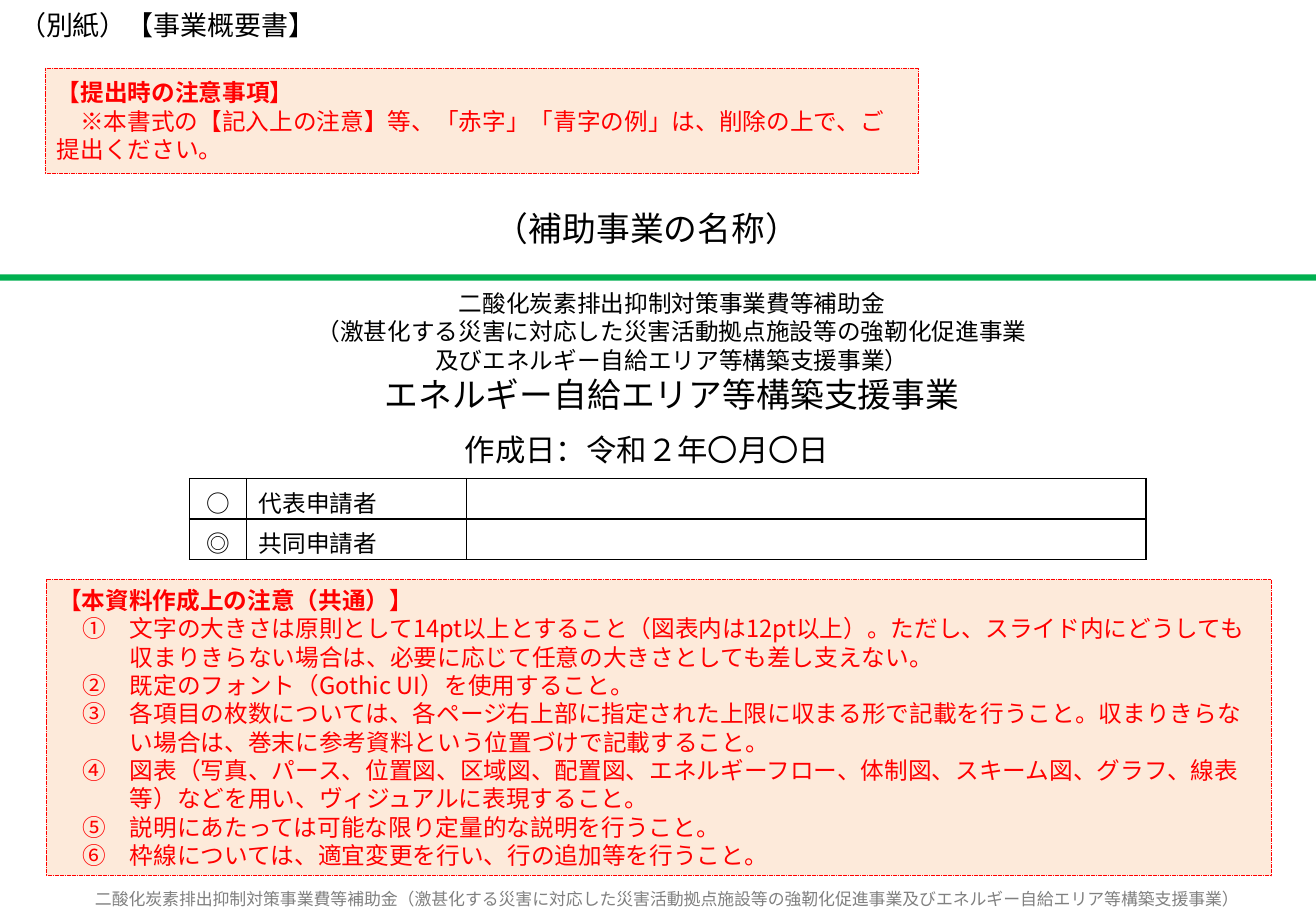
import pptx
import pptx.util
import pptx.dml.color
import pptx.enum.dml
import pptx.enum.shapes
import pptx.enum.text
import pptx.oxml.ns
from lxml import etree

Inches = pptx.util.Inches
Pt = pptx.util.Pt
qn = pptx.oxml.ns.qn
ALIGN = pptx.enum.text.PP_ALIGN
ANCHOR = pptx.enum.text.MSO_ANCHOR
RECT = pptx.enum.shapes.MSO_SHAPE.RECTANGLE
FONT = "Noto Sans CJK JP"
COLORS = {"ink": "000000", "red": "FF0000", "peach": "FDEADA",
          "green": "00B050", "gray": "808080"}

GRANT = ["二酸化炭素排出抑制対策事業費等補助金",
         "（激甚化する災害に対応した災害活動拠点施設等の強靭化促進事業",
         "及びエネルギー自給エリア等構築支援事業）"]
SCHEME = "エネルギー自給エリア等構築支援事業"
ROLES = [("○", "代表申請者", ""), ("◎", "共同申請者", "")]
SUBMIT = ["【提出時の注意事項】",
          "※本書式の【記入上の注意】等、「赤字」「青字の例」は、削除の上で、ご提出ください。"]
RULES = [
    "【本資料作成上の注意（共通）】",
    "文字の大きさは原則として14pt以上とすること（図表内は12pt以上）。ただし、スライド内にどうしても収まりきらない場合は、必要に応じて任意の大きさとしても差し支えない。",
    "既定のフォント（Gothic UI）を使用すること。",
    "各項目の枚数については、各ページ右上部に指定された上限に収まる形で記載を行うこと。収まりきらない場合は、巻末に参考資料という位置づけで記載すること。",
    "図表（写真、パース、位置図、区域図、配置図、エネルギーフロー、体制図、スキーム図、グラフ、線表等）などを用い、ヴィジュアルに表現すること。",
    "説明にあたっては可能な限り定量的な説明を行うこと。",
    "枠線については、適宜変更を行い、行の追加等を行うこと。",
]


def tint(name):
    """Return the named colour."""
    return pptx.dml.color.RGBColor.from_string(COLORS[name])


def style(para, size, color="ink", bold=False, align=ALIGN.LEFT):
    """Format a paragraph and its runs."""
    para.alignment = align
    for run in para.runs:
        font = run.font
        font.size, font.bold, font.name = Pt(size), bold, FONT
        font.color.rgb = tint(color)
        etree.SubElement(run._r.rPr, qn("a:ea"), typeface=FONT)


def add_text(slide, box, lines, sizes, color="ink", align=ALIGN.CENTER, anchor=ANCHOR.TOP):
    """Place plain lines of text in a box."""
    frame = slide.shapes.add_textbox(*map(Inches, box)).text_frame
    frame.word_wrap = True
    frame.vertical_anchor = anchor
    frame.text = "\n".join(lines)
    for para, size in zip(frame.paragraphs, sizes):
        style(para, size, color, align=align)


def add_bar(slide, box):
    """Draw the green divider."""
    bar = slide.shapes.add_shape(RECT, *map(Inches, box))
    bar.shadow.inherit = False
    bar.fill.solid()
    bar.fill.fore_color.rgb = tint("green")
    bar.line.fill.background()


def add_note(slide, box, lines, margin, indent, bullet=None):
    """Draw a dashed red note with a bold heading."""
    note = slide.shapes.add_shape(RECT, *map(Inches, box))
    note.shadow.inherit = False
    note.fill.solid()
    note.fill.fore_color.rgb = tint("peach")
    note.line.color.rgb = tint("red")
    note.line.width = Pt(0.25)
    note.line.dash_style = pptx.enum.dml.MSO_LINE.SQUARE_DOT
    frame = note.text_frame
    frame.word_wrap = True
    frame.vertical_anchor = ANCHOR.MIDDLE
    frame.text = "\n".join(lines)
    head, *body = frame.paragraphs
    style(head, 14, "red", bold=True)
    for para in body:
        style(para, 14, "red")
        props = para._p.get_or_add_pPr()
        props.set("marL", str(Inches(margin)))
        props.set("indent", str(Inches(indent)))
        if bullet:
            etree.SubElement(props, qn("a:buFont"), typeface="+mj-ea")
            etree.SubElement(props, qn("a:buAutoNum"), type=bullet)


def add_edges(cell):
    """Give a cell thin black borders and no fill."""
    props = cell._tc.get_or_add_tcPr()
    for side in ("lnL", "lnR", "lnT", "lnB"):
        edge = etree.SubElement(props, qn("a:" + side), w=str(Pt(1)))
        fill = etree.SubElement(edge, qn("a:solidFill"))
        etree.SubElement(fill, qn("a:srgbClr"), val=COLORS["ink"])
    cell.fill.background()


def add_roles(slide, box, widths):
    """Build the table of applicants."""
    table = slide.shapes.add_table(len(ROLES), len(widths), *map(Inches, box)).table
    table.first_row = table.horz_banding = False
    for col, width in zip(table.columns, widths):
        col.width = Inches(width)
    for r, row in enumerate(ROLES):
        for c, text in enumerate(row):
            cell = table.cell(r, c)
            cell.text_frame.text = text
            para = cell.text_frame.paragraphs[0]
            style(para, 14, align=ALIGN.LEFT if c else ALIGN.CENTER)
            if not text:
                etree.SubElement(para._p, qn("a:endParaRPr"), sz="1400")
            add_edges(cell)


def add_cover(slide, box):
    """Lay out the cover page within the box."""
    x, y, w, h = box
    add_text(slide, (x + 0.07, y + h - 0.21, w, 0.21), ["".join(GRANT)], [10],
             "gray", anchor=ANCHOR.MIDDLE)
    add_bar(slide, (x, y + 2.26, w, 0.05))
    add_roles(slide, (x + 1.56, y + 3.94, 7.87, 0.66), [0.47, 1.81, 5.59])
    add_text(slide, (x + 0.72, y + 1.42, 9.21, 0.91), ["（補助事業の名称）"], [20],
             anchor=ANCHOR.MIDDLE)
    add_text(slide, (x + 0.06, y + 0.02, 3.54, 0.37), ["（別紙）【事業概要書】"], [16],
             align=ALIGN.LEFT)
    add_text(slide, (x + 1.79, y + 2.33, 7.48, 1.14), GRANT + [SCHEME], [14, 14, 14, 20])
    add_text(slide, (x + 3.24, y + 3.5, 4.17, 0.4), ["作成日：令和２年〇月〇日"], [18])
    add_note(slide, (x + 0.37, y + 0.56, 7.19, 0.87), SUBMIT, 0, 0.19)
    add_note(slide, (x + 0.38, y + 4.77, 10.08, 2.44), RULES, 0.59, -0.39, "circleNumDbPlain")


def main():
    """Build and save the deck."""
    deck = pptx.Presentation()
    deck.slide_width, deck.slide_height = Inches(10.83), Inches(7.5)
    slide = deck.slides.add_slide(deck.slide_layouts[6])
    add_cover(slide, (0, 0, 10.83, 7.5))
    deck.save("out.pptx")


if __name__ == "__main__":
    main()
